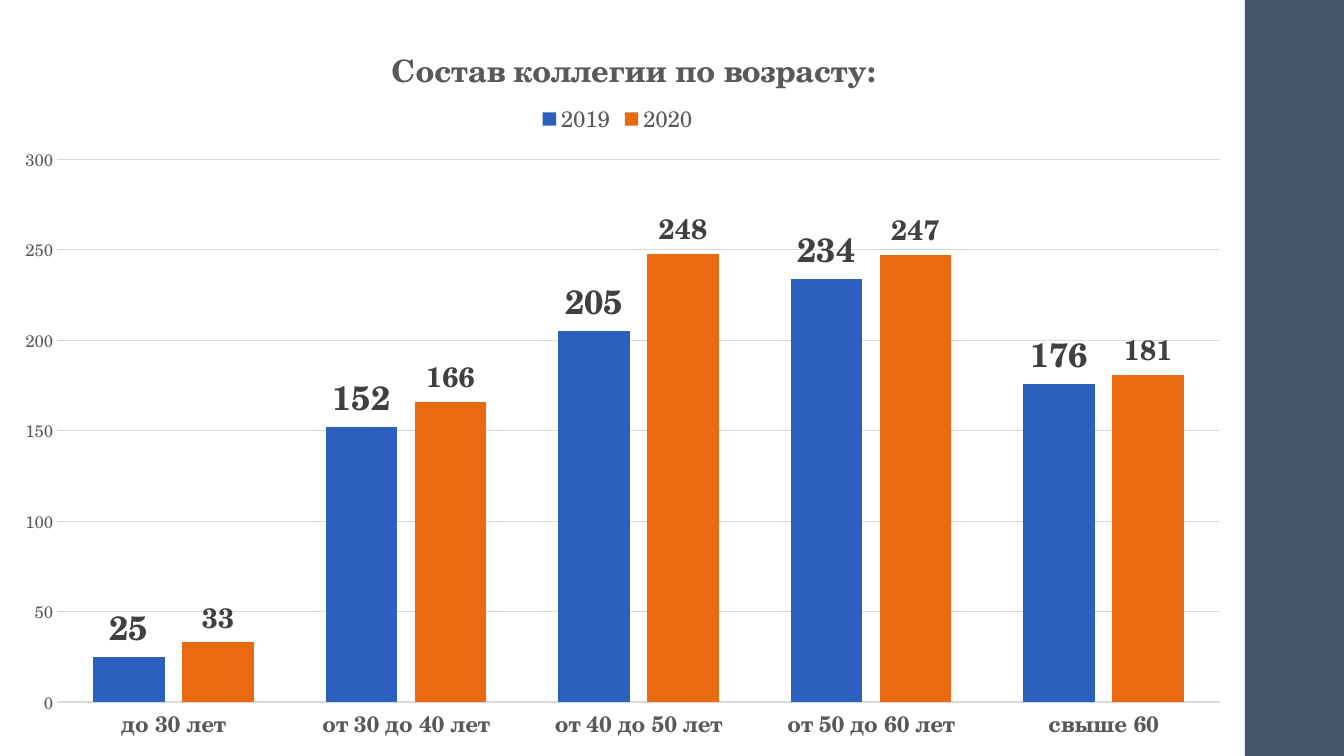
from lxml import etree
from pptx import Presentation
from pptx.chart.data import CategoryChartData
from pptx.dml.color import RGBColor
from pptx.enum.chart import XL_CHART_TYPE, XL_LABEL_POSITION, XL_LEGEND_POSITION, XL_TICK_MARK
from pptx.enum.shapes import MSO_SHAPE
from pptx.oxml.ns import qn
from pptx.util import Pt

COLUMNS = XL_CHART_TYPE.COLUMN_CLUSTERED
LABEL_ABOVE = XL_LABEL_POSITION.OUTSIDE_END
LEGEND_TOP = XL_LEGEND_POSITION.TOP
NO_TICKS = XL_TICK_MARK.NONE
RECTANGLE = MSO_SHAPE.RECTANGLE

FONT = "TeX Gyre Schola"
GRAY_TEXT = "595959"
GRID = "D9D9D9"
SLIDE_WIDTH, SLIDE_HEIGHT = 960, 540
CHART_WIDTH = 889.2
SIDEBAR_WIDTH = 72

AGES = ["до 30 лет", "от 30 до 40 лет", "от 40 до 50 лет", "от 50 до 60 лет", "свыше 60"]
YEARS = [
    ("2019", [25, 152, 205, 234, 176], "2B60BE", 24),
    ("2020", [33, 166, 248, 247, 181], "EA6A12", 20),
]


def rgb(value):
    return RGBColor.from_string(value)


def format_font(font, size, color=GRAY_TEXT, bold=False):
    font.name = FONT
    font.size = Pt(size)
    font.bold = bold
    font.color.rgb = rgb(color)


def write_text(frame, text, **font_format):
    frame.text = text
    format_font(frame.paragraphs[0].runs[0].font, **font_format)


def format_line(line, color, width):
    line.color.rgb = rgb(color)
    line.width = Pt(width)


def place(parent, index, **settings):
    for old_layout in parent.findall(qn("c:layout")):
        parent.remove(old_layout)
    layout = etree.Element(qn("c:layout"))
    manual = etree.SubElement(layout, qn("c:manualLayout"))
    for key, value in settings.items():
        etree.SubElement(manual, qn(f"c:{key}")).set("val", str(value))
    parent.insert(index, layout)


def add_sidebar(slide):
    sidebar = slide.shapes.add_shape(
        RECTANGLE, Pt(CHART_WIDTH), Pt(0), Pt(SIDEBAR_WIDTH), Pt(SLIDE_HEIGHT))
    sidebar.shadow.inherit = False
    sidebar.fill.solid()
    sidebar.fill.fore_color.rgb = rgb("44546A")
    sidebar.line.fill.background()


def format_axes(chart):
    ages, counts = chart.category_axis, chart.value_axis
    for axis in (ages, counts):
        axis.major_tick_mark = NO_TICKS
        axis.minor_tick_mark = NO_TICKS
    format_font(ages.tick_labels.font, 16, bold=True)
    format_line(ages.format.line, GRID, 1)
    format_font(counts.tick_labels.font, 12)
    counts.format.line.fill.background()
    counts.minimum_scale, counts.maximum_scale, counts.major_unit = 0, 300, 50
    counts.has_major_gridlines = True
    format_line(counts.major_gridlines.format.line, GRID, 0.75)


def format_year(series, color, label_size):
    series.format.fill.solid()
    series.format.fill.fore_color.rgb = rgb(color)
    series.invert_if_negative = False
    labels = series.data_labels
    labels.show_value = True
    labels.position = LABEL_ABOVE
    format_font(labels.font, label_size, "404040", bold=True)


def add_age_chart(slide):
    data = CategoryChartData()
    data.categories = AGES
    for year, counts, _, _ in YEARS:
        data.add_series(year, counts)
    chart = slide.shapes.add_chart(
        COLUMNS, Pt(0), Pt(0), Pt(CHART_WIDTH), Pt(SLIDE_HEIGHT), data).chart
    format_font(chart.font, 10, "000000")

    chart.has_title = True
    write_text(chart.chart_title.text_frame, "Состав коллегии по возрасту:", size=22, bold=True)
    chart.chart_title.include_in_layout = False
    place(chart.chart_title._element, 1, xMode="edge", yMode="edge", x=0.31, y=0.05)

    chart.has_legend = True
    chart.legend.position = LEGEND_TOP
    chart.legend.include_in_layout = False
    format_font(chart.legend.font, 16)
    place(chart.legend._element, 1, xMode="edge", yMode="edge", x=0.43, y=0.13)

    format_axes(chart)
    plot = chart.plots[0]
    plot.vary_by_categories = False
    plot.gap_width, plot.overlap = 100, -24
    for series, (_, _, color, label_size) in zip(plot.series, YEARS):
        format_year(series, color, label_size)
    place(chart._chartSpace.chart.plotArea, 0, layoutTarget="inner",
          xMode="edge", yMode="edge", x=0.046, y=0.211, w=0.934, h=0.718)


def main():
    presentation = Presentation()
    presentation.slide_width = Pt(SLIDE_WIDTH)
    presentation.slide_height = Pt(SLIDE_HEIGHT)
    slide = presentation.slides.add_slide(presentation.slide_layouts[6])
    add_sidebar(slide)
    add_age_chart(slide)
    presentation.save("out.pptx")


if __name__ == "__main__":
    main()
